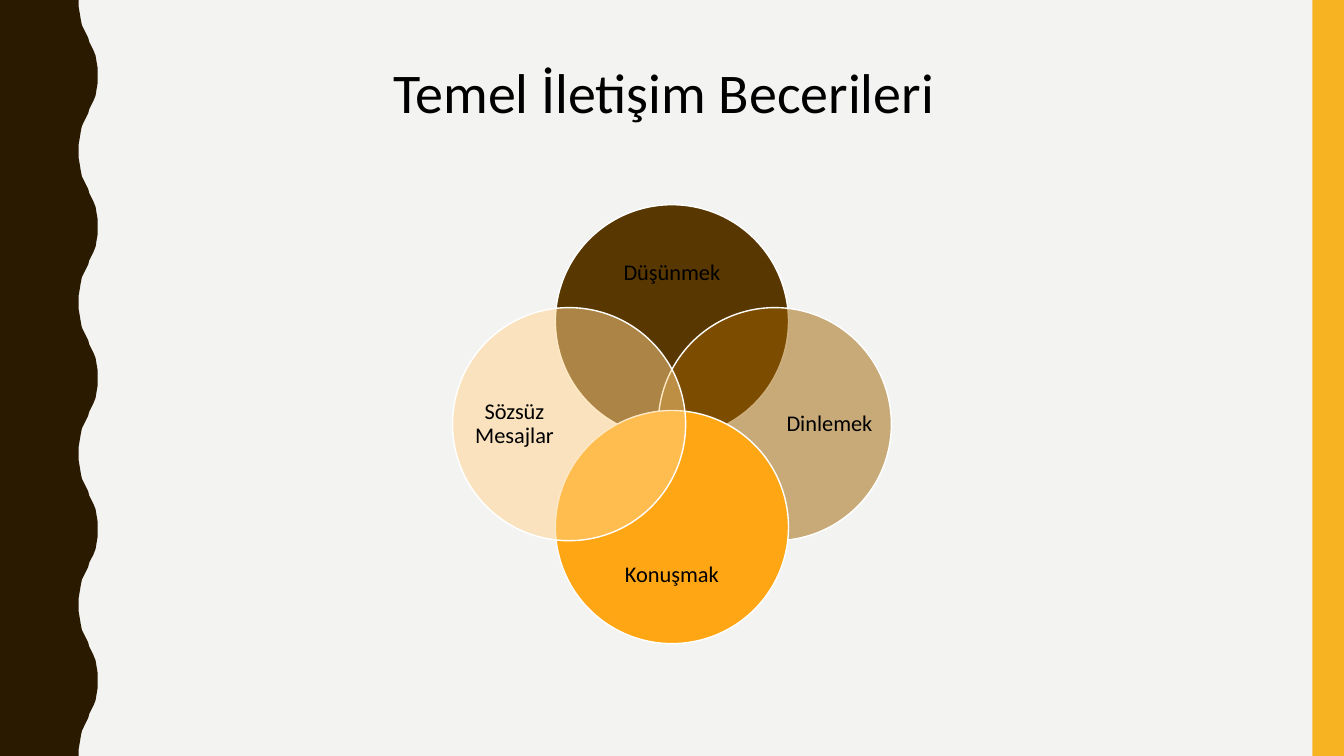
from dataclasses import dataclass
from typing import Optional

from lxml import etree
from pptx import Presentation, util as u
from pptx.dml.color import RGBColor
from pptx.enum import shapes, text
from pptx.oxml.ns import qn

PX = 9525  # EMU per px, 96 px to the inch
SLIDE_W, SLIDE_H = 1280, 720


@dataclass(frozen=True)
class Theme:
    font: str = "Calibri"
    title_size: int = 40
    label_size: int = 16
    background: str = "F3F3F2"
    wave: str = "2A1A00"
    side_bar: str = "F8B323"
    outline: str = "FFFFFF"
    ink: str = "000000"


@dataclass(frozen=True)
class Skill:
    name: str
    dx: int  # direction from the diagram's centre
    dy: int
    color: str
    opacity: Optional[int] = None  # percent


THEME = Theme()
SKILLS = [
    Skill("Düşünmek", 0, -1, "593700"),
    Skill("Dinlemek", 1, 0, "9F6200", 50),
    Skill("Konuşmak", 0, 1, "FFA615"),
    Skill("Sözsüz Mesajlar", -1, 0, "FFD28A", 50),
]

CENTER_X, CENTER_Y = 640, 404
DIAMETER, CIRCLE_SHIFT = 222, 98
LABEL_LONG, LABEL_TALL, LABEL_WIDE = 171, 70, 85
LABEL_SHIFT_X, LABEL_SHIFT_Y = 150, 144

WAVE_PERIOD = 144
# Edge of the wave from trough to crest, as (x, y)
WAVE_RISE = [(75, 0), (75, 7), (76, 13), (77, 19), (78, 24), (80, 28), (82, 32),
             (84, 36), (85, 40), (87, 44), (89, 48), (91, 53), (92, 59), (93, 65), (93, 72)]


def px(length: float) -> int:
    return u.Emu(round(length * PX))


def centered(x: float, y: float, width: int, height: int) -> list[int]:
    """Left, top, width and height of a box around a centre."""
    return [px(v) for v in (x - width / 2, y - height / 2, width, height)]


def paint(shape, color: str, opacity: Optional[int] = None, outline: Optional[str] = None) -> None:
    shape.shadow.inherit = False
    shape.fill.solid()
    shape.fill.fore_color.rgb = RGBColor.from_string(color)
    if opacity is not None:
        color_node = shape.fill._xPr.find(qn("a:solidFill"))[0]
        etree.SubElement(color_node, qn("a:alpha"), val=str(opacity * 1000))
    if outline:
        shape.line.color.rgb = RGBColor.from_string(outline)
        shape.line.width = u.Pt(1)
    else:
        shape.line.fill.background()


def write(paragraph, words: str, size: int) -> None:
    run = paragraph.add_run()
    run.text = words
    run.font.name = THEME.font
    run.font.size = u.Pt(size)
    run.font.color.rgb = RGBColor.from_string(THEME.ink)


def add_wave(slide) -> None:
    fall = [(x, WAVE_PERIOD - y) for x, y in reversed(WAVE_RISE[:-1])]
    edge = [(x, y + top) for top in range(0, SLIDE_H, WAVE_PERIOD) for x, y in WAVE_RISE + fall]
    builder = slide.shapes.build_freeform(0, 0, scale=PX)
    builder.add_line_segments(edge + [(0, SLIDE_H)], close=True)
    paint(builder.convert_to_shape(), THEME.wave)


def add_side_bar(slide) -> None:
    bar = slide.shapes.add_shape(shapes.MSO_SHAPE.RECTANGLE, px(1250), 0, px(30), px(SLIDE_H))
    paint(bar, THEME.side_bar)


def add_title(slide, words: str) -> None:
    title = slide.shapes.title
    title.left, title.top, title.width, title.height = (px(v) for v in (365, 50, 540, 74))
    frame = title.text_frame
    frame.word_wrap = False
    frame.auto_size = text.MSO_AUTO_SIZE.SHAPE_TO_FIT_TEXT
    frame.vertical_anchor = text.MSO_ANCHOR.TOP
    paragraph = frame.paragraphs[0]
    paragraph.alignment = text.PP_ALIGN.LEFT
    write(paragraph, words, THEME.title_size)


def add_skill(slide, skill: Skill) -> None:
    circle = slide.shapes.add_shape(
        shapes.MSO_SHAPE.OVAL,
        *centered(CENTER_X + skill.dx * CIRCLE_SHIFT, CENTER_Y + skill.dy * CIRCLE_SHIFT,
                  DIAMETER, DIAMETER))
    paint(circle, skill.color, skill.opacity, THEME.outline)

    size = (LABEL_WIDE, LABEL_LONG) if skill.dx else (LABEL_LONG, LABEL_TALL)
    label = slide.shapes.add_textbox(
        *centered(CENTER_X + skill.dx * LABEL_SHIFT_X, CENTER_Y + skill.dy * LABEL_SHIFT_Y, *size))
    frame = label.text_frame
    frame.word_wrap = True
    frame.vertical_anchor = text.MSO_ANCHOR.MIDDLE
    frame.margin_left = frame.margin_top = frame.margin_right = frame.margin_bottom = 0
    paragraph = frame.paragraphs[0]
    paragraph.alignment = text.PP_ALIGN.CENTER
    paragraph.line_spacing = 0.9
    write(paragraph, skill.name, THEME.label_size)


def main() -> None:
    deck = Presentation()
    deck.slide_width, deck.slide_height = px(SLIDE_W), px(SLIDE_H)
    slide = deck.slides.add_slide(deck.slide_layouts.get_by_name("Title Only"))
    slide.background.fill.solid()
    slide.background.fill.fore_color.rgb = RGBColor.from_string(THEME.background)
    add_wave(slide)
    add_side_bar(slide)
    add_title(slide, "Temel İletişim Becerileri")
    for skill in SKILLS:
        add_skill(slide, skill)
    deck.save("out.pptx")


if __name__ == "__main__":
    main()
